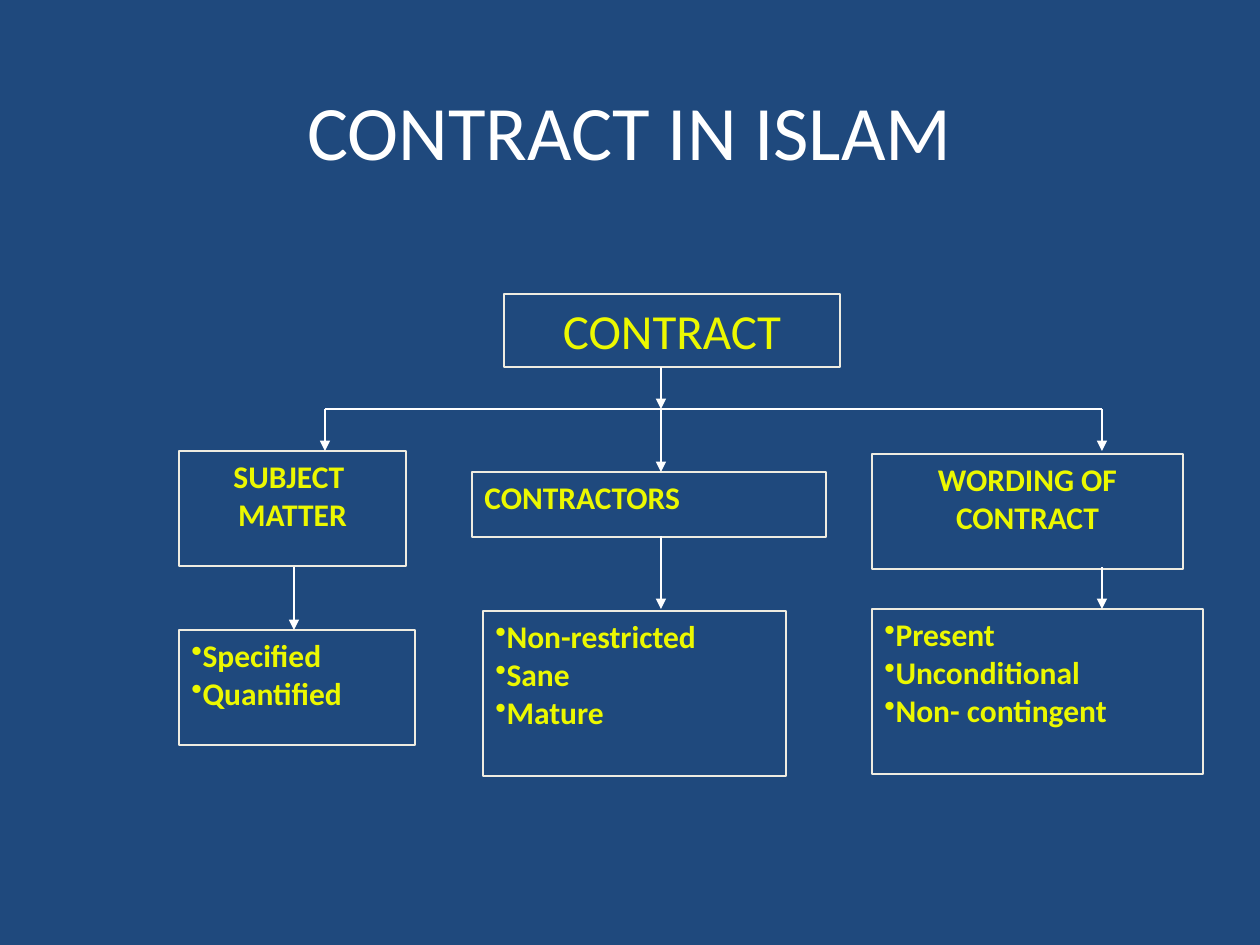
"""Build the slide showing the parts of a contract in Islam as a tree."""
from lxml.etree import SubElement
from pptx import Presentation
from pptx.dml.color import RGBColor
from pptx.enum.shapes import MSO_CONNECTOR as Connector, MSO_SHAPE as Shape
from pptx.enum.text import MSO_ANCHOR as Anchor, PP_ALIGN as Align
from pptx.oxml.ns import qn
from pptx.util import Pt

PX = 914400 / 126
COLORS = {"background": "1F497D", "title": "FFFFFF", "text": "ECF800",
          "border": "EEECE1", "arrow": "FFFFFF"}

TITLE = ("CONTRACT IN ISLAM", (63, 38, 1134, 183))
ROOT = ("CONTRACT", (504, 294, 336, 73))
BRANCHES = [
    {"head": ["SUBJECT ", "MATTER"], "head_box": (179, 451, 227, 115), "align": Align.CENTER,
     "terms": ["Specified", "Quantified"], "terms_box": (179, 630, 236, 115),
     "drop": (325, 451), "link": (294, 567, 630)},
    {"head": ["CONTRACTORS"], "head_box": (472, 472, 354, 65), "align": Align.LEFT,
     "terms": ["Non-restricted", "Sane", "Mature"], "terms_box": (483, 611, 303, 165),
     "drop": (661, 472), "link": (661, 536, 609)},
    {"head": ["WORDING OF", "CONTRACT"], "head_box": (872, 454, 311, 115), "align": Align.CENTER,
     "terms": ["Present", "Unconditional", "Non- contingent"], "terms_box": (872, 609, 331, 165),
     "drop": (1102, 451), "link": (1102, 567, 609)},
]
BUS_Y = 409


def px(*lengths):
    return [round(length * PX) for length in lengths]


def rgb(role):
    return RGBColor.from_string(COLORS[role])


def write(frame, lines, size, color, align, bold=False, bullet=False):
    frame.word_wrap = True
    for index, line in enumerate(lines):
        paragraph = frame.add_paragraph() if index else frame.paragraphs[0]
        paragraph.text = line
        paragraph.alignment = align
        font = paragraph.font
        font.name, font.size, font.bold = "Calibri", Pt(size), bold
        font.color.rgb = rgb(color)
        if bullet:
            properties = paragraph._p.get_or_add_pPr()
            mark = SubElement(properties, qn("a:buChar"), char="•")
            properties.remove(mark)
            properties.insert(0, mark)


def add_box(slide, box, lines, size=18, align=Align.LEFT, bold=True, bullet=False):
    rect = slide.shapes.add_shape(Shape.RECTANGLE, *px(*box))
    rect.shadow.inherit = False
    rect.fill.background()
    rect.line.color.rgb = rgb("border")
    rect.line.width = Pt(1)
    rect.text_frame.vertical_anchor = Anchor.TOP
    write(rect.text_frame, lines, size, "text", align, bold, bullet)


def add_line(slide, start, end, arrow=True):
    link = slide.shapes.add_connector(Connector.STRAIGHT, *px(*start, *end))
    link.line.color.rgb = rgb("arrow")
    link.line.width = Pt(1)
    if arrow:
        SubElement(link.line._get_or_add_ln(), qn("a:tailEnd"), type="triangle")
    SubElement(link._element.spPr, qn("a:effectLst"))


def main():
    deck = Presentation()
    deck.slide_width, deck.slide_height = px(1260, 945)
    slide = deck.slides.add_slide(deck.slide_layouts[6])
    slide.background.fill.solid()
    slide.background.fill.fore_color.rgb = rgb("background")

    heading, heading_box = TITLE
    title = slide.shapes.add_textbox(*px(*heading_box)).text_frame
    title.vertical_anchor = Anchor.MIDDLE
    write(title, [heading], 44, "title", Align.CENTER)

    root, root_box = ROOT
    add_box(slide, root_box, [root], 28, Align.CENTER, bold=False)
    for branch in BRANCHES:
        add_box(slide, branch["head_box"], branch["head"], align=branch["align"])
        add_box(slide, branch["terms_box"], branch["terms"], bullet=True)

    drops = [branch["drop"][0] for branch in BRANCHES]
    add_line(slide, (drops[0], BUS_Y), (drops[-1], BUS_Y), arrow=False)
    add_line(slide, (drops[1], root_box[1] + root_box[3]), (drops[1], BUS_Y))
    for branch in BRANCHES:
        drop_x, drop_end = branch["drop"]
        link_x, link_start, link_end = branch["link"]
        add_line(slide, (drop_x, BUS_Y), (drop_x, drop_end))
        add_line(slide, (link_x, link_start), (link_x, link_end))

    deck.save("out.pptx")


if __name__ == "__main__":
    main()
